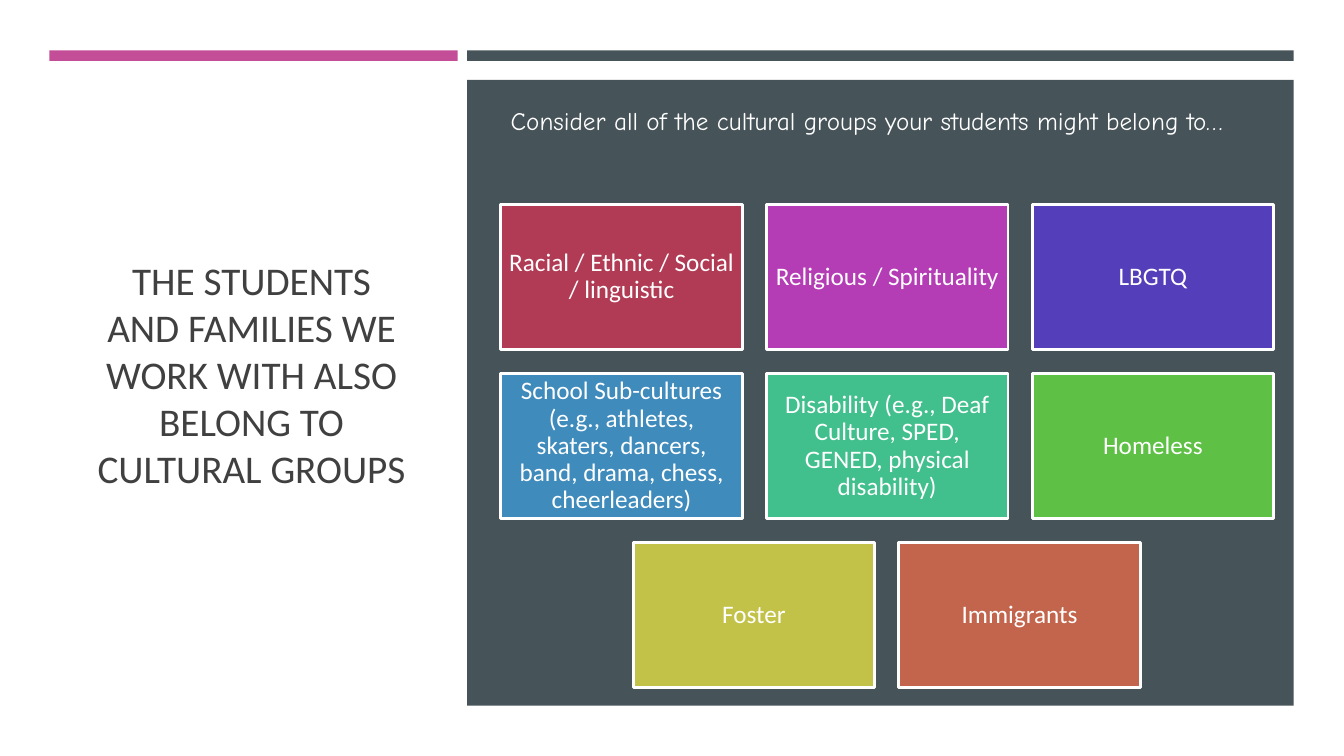
from dataclasses import dataclass

from pptx import Presentation
from pptx.dml.color import RGBColor
from pptx.enum.shapes import MSO_SHAPE
from pptx.enum.text import MSO_ANCHOR as ANCHOR, PP_ALIGN as ALIGN
from pptx.util import Emu, Pt

PX = 9525  # EMU per px, 96 px to the inch


@dataclass(frozen=True)
class Theme:
    white: str = "FFFFFF"
    ink: str = "404040"
    pink: str = "C34D97"
    slate: str = "465359"
    font: str = "Calibri"
    intro_font: str = "Comic Neue"
    title_size: int = 28
    body_size: int = 18
    card_line: int = 2


THEME = Theme()

TITLE = "THE STUDENTS AND FAMILIES WE WORK WITH ALSO BELONG TO CULTURAL GROUPS"
INTRO = "Consider all of the cultural groups your students might belong to…"
GROUP_ROWS = [
    [
        ("Racial / Ethnic / Social / linguistic", "B13B54"),
        ("Religious / Spirituality", "B43CB5"),
        ("LBGTQ", "553EB9"),
    ],
    [
        ("School Sub-cultures (e.g., athletes, skaters, dancers, band, drama, "
         "chess, cheerleaders)", "3F8BBC"),
        ("Disability (e.g., Deaf Culture, SPED, GENED, physical disability)", "41BF8C"),
        ("Homeless", "5EC145"),
    ],
    [
        ("Foster", "C2C249"),
        ("Immigrants", "C3654D"),
    ],
]

CARD_LEFT, CARD_TOP = 477, 195
CARD_W, CARD_H = 230, 138
CARD_GAP = 23
CARD_INSET = 7


def px(*lengths):
    return [Emu(n * PX) for n in lengths]


def rgb(color):
    return RGBColor.from_string(color)


def set_attrs(obj, values):
    for name, value in values.items():
        setattr(obj, name, value)


def write(s, text, size, color, font=THEME.font, align=ALIGN.CENTER, anchor=ANCHOR.MIDDLE):
    """Put one formatted paragraph into a shape and return the paragraph."""
    tf = s.text_frame
    set_attrs(tf, {"word_wrap": True, "vertical_anchor": anchor})
    p = tf.paragraphs[0]
    p.alignment = align
    r = p.add_run()
    r.text = text
    set_attrs(r.font, {"name": font, "size": Pt(size)})
    r.font.color.rgb = rgb(color)
    return p


def add_block(slide, box, color):
    s = slide.shapes.add_shape(MSO_SHAPE.RECTANGLE, *px(*box))
    s.shadow.inherit = False
    s.fill.solid()
    s.fill.fore_color.rgb = rgb(color)
    s.line.fill.background()
    return s


def add_text(slide, box, *args, **kwargs):
    write(slide.shapes.add_textbox(*px(*box)), *args, **kwargs)


def add_card(slide, left, top, text, color):
    s = add_block(slide, (left, top, CARD_W, CARD_H), color)
    s.line.color.rgb = rgb(THEME.white)
    s.line.width = Pt(THEME.card_line)
    sides = ("left", "top", "right", "bottom")
    set_attrs(s.text_frame, {f"margin_{side}": Emu(CARD_INSET * PX) for side in sides})
    write(s, text, THEME.body_size, THEME.white).line_spacing = 0.9


def add_cards(slide, rows):
    """Lay the cards out on a grid, centring rows that are not full."""
    columns = max(len(row) for row in rows)
    step_x, step_y = CARD_W + CARD_GAP, CARD_H + CARD_GAP
    for i, row in enumerate(rows):
        left = CARD_LEFT + (columns - len(row)) * step_x // 2
        for j, (text, color) in enumerate(row):
            add_card(slide, left + j * step_x, CARD_TOP + i * step_y, text, color)


def main():
    prs = Presentation()
    prs.slide_width, prs.slide_height = px(1280, 720)
    slide = prs.slides.add_slide(prs.slide_layouts[6])
    slide.background.fill.solid()
    slide.background.fill.fore_color.rgb = rgb(THEME.white)

    add_text(slide, (79, 109, 321, 494), TITLE, THEME.title_size, THEME.ink)
    add_block(slide, (47, 48, 389, 10), THEME.pink)
    add_block(slide, (445, 48, 787, 10), THEME.slate)
    add_block(slide, (445, 76, 787, 596), THEME.slate)
    add_cards(slide, GROUP_ROWS)
    add_text(slide, (477, 96, 768, 68), INTRO, THEME.body_size, THEME.white,
             font=THEME.intro_font, align=ALIGN.LEFT, anchor=ANCHOR.TOP)

    prs.save("out.pptx")


if __name__ == "__main__":
    main()
